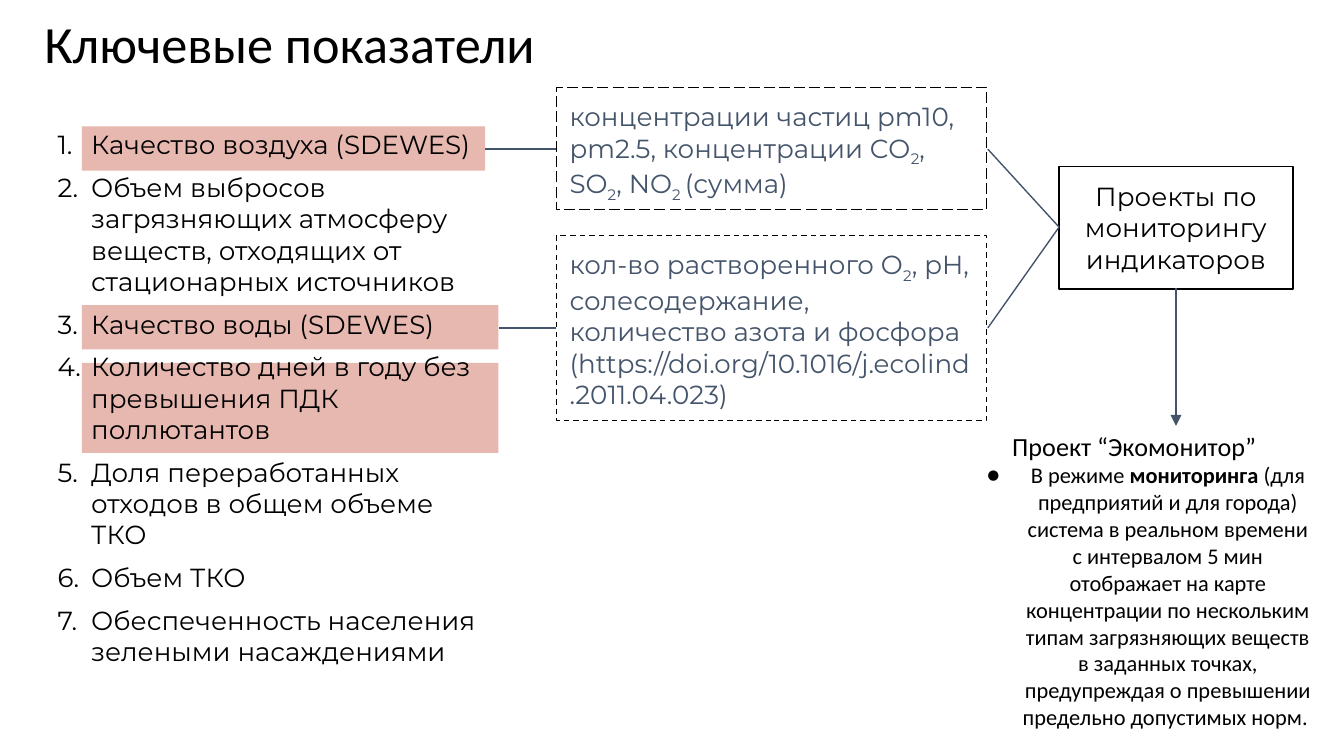
from dataclasses import dataclass

from lxml import etree
from pptx import Presentation
from pptx import util as u
from pptx.dml.color import RGBColor as Rgb
from pptx.enum import dml, shapes, text
from pptx.oxml import ns

PX = 9144  # EMU per px, 100 px to the inch


@dataclass(frozen=True)
class Theme:
    ink: Rgb = Rgb(0, 0, 0)
    slate: Rgb = Rgb(0x44, 0x54, 0x6A)
    rose: Rgb = Rgb(0xE6, 0xB8, 0xAF)
    sans: str = "Calibri"
    geo: str = "Montserrat"
    head: int = 28
    body: int = 14
    small: int = 12
    rule: float = 0.75


T = Theme()


def write(para, parts, size, face, color, mark=None):
    """Add runs; every second one is marked as "sub" or "bold"."""
    for i, part in enumerate(parts):
        run = para.add_run()
        run.text = part
        font = run.font
        font.size, font.name = u.Pt(size), face
        font.color.rgb = color
        if i % 2 and mark == "bold":
            font.bold = True
        elif i % 2 and mark == "sub":
            run._r.get_or_add_rPr().set("baseline", "-25000")


def bullet(para, left, hang, size, face, tag, **attrs):
    """Give a paragraph a black bullet with a hanging indent in px."""
    prop = para._p.get_or_add_pPr()
    prop.set("marL", str(left * PX))
    prop.set("indent", str(-hang * PX))
    tint = etree.SubElement(prop, ns.qn("a:buClr"))
    etree.SubElement(tint, ns.qn("a:srgbClr"), val=str(T.ink))
    etree.SubElement(prop, ns.qn("a:buSzPts"), val=str(size * 100))
    etree.SubElement(prop, ns.qn("a:buFont"), typeface=face)
    etree.SubElement(prop, ns.qn(tag), **attrs)


deck = Presentation()
deck.slide_width = 1000 * PX
deck.slide_height = deck.slide_width * 9 // 16
slide = deck.slides.add_slide(deck.slide_layouts[5])
items = slide.shapes

# Title
title = items.title
title.left, title.top, title.width, title.height = (n * PX for n in (26, 7, 905, 56))
frame = title.text_frame
frame.margin_left = frame.margin_right = 7 * PX
frame.margin_top = frame.margin_bottom = 4 * PX
frame.vertical_anchor = text.MSO_ANCHOR.MIDDLE
para = frame.paragraphs[0]
para.alignment = text.PP_ALIGN.LEFT
para.line_spacing = 0.9
write(para, ["Ключевые показатели"], T.head, T.sans, T.ink)

# Bands behind the measured indicators
for top, wide, high in ((94, 300, 33), (227, 310, 33), (270, 310, 67)):
    band = items.add_shape(shapes.MSO_SHAPE.RECTANGLE,
                           61 * PX, top * PX, wide * PX, high * PX)
    band.shadow.inherit = False
    band.fill.solid()
    band.fill.fore_color.rgb = T.rose
    band.line.fill.background()

# Numbered indicators
goals = [
    "Качество воздуха (SDEWES)",
    "Объем выбросов загрязняющих атмосферу веществ, отходящих от стационарных источников",
    "Качество воды (SDEWES)",
    "Количество дней в году без превышения ПДК поллютантов",
    "Доля переработанных отходов в общем объеме ТКО",
    "Объем ТКО",
    "Обеспеченность населения зелеными насаждениями",
]
frame = items.add_textbox(33 * PX, 91 * PX, 338 * PX, 447 * PX).text_frame
frame.word_wrap = True
frame.margin_left = frame.margin_right = 10 * PX
frame.margin_top = frame.margin_bottom = 5 * PX
for i, goal in enumerate(goals):
    para = frame.add_paragraph() if i else frame.paragraphs[0]
    para.space_before = u.Pt(6)
    bullet(para, 25, 28, T.body, T.geo, "a:buAutoNum", type="arabicPeriod")
    write(para, [goal], T.body, T.geo, T.ink)

# Outlined boxes: place, dash, colour, alignment, space before, runs
left, mid = text.PP_ALIGN.LEFT, text.PP_ALIGN.CENTER
dash = dml.MSO_LINE
boxes = [
    ((414, 65, 320, 91), dash.LONG_DASH, T.slate, left, 6,
     ["концентрации частиц pm10, pm2.5, концентрации CO", "2", ", SO", "2",
      ", NO", "2 ", "(сумма)"]),
    ((414, 175, 320, 138), dash.DASH, T.slate, left, 6,
     ["кол-во растворенного O", "2",
      ", pH, солесодержание, количество азота и фосфора "
      "(https://doi.org/10.1016/j.ecolind.2011.04.023)"]),
    ((788, 124, 174, 91), dash.SOLID, T.ink, mid, 0,
     ["Проекты по мониторингу индикаторов"]),
]
for place, style, color, align, gap, parts in boxes:
    box = items.add_shape(shapes.MSO_SHAPE.RECTANGLE, *(n * PX for n in place))
    box.shadow.inherit = False
    box.fill.background()
    box.line.color.rgb = T.ink
    box.line.width = u.Pt(T.rule)
    box.line.dash_style = style
    frame = box.text_frame
    frame.word_wrap = True
    frame.vertical_anchor = text.MSO_ANCHOR.TOP
    frame.margin_left = frame.margin_right = 10 * PX
    frame.margin_top = frame.margin_bottom = 10 * PX
    para = frame.paragraphs[0]
    para.alignment = align
    para.space_before = u.Pt(gap)
    write(para, parts, T.body, T.geo, color, "sub")

# Links, the last one with an arrowhead
links = [
    (361, 111, 414, 111),
    (414, 244, 371, 244),
    (735, 111, 788, 169),
    (735, 244, 788, 169),
    (875, 214, 875, 317),
]
for ends in links:
    link = items.add_connector(shapes.MSO_CONNECTOR.STRAIGHT, *(n * PX for n in ends))
    link.line.color.rgb = T.slate
    link.line.width = u.Pt(T.rule)
    etree.SubElement(link._element.spPr, ns.qn("a:effectLst"))
etree.SubElement(link.line._get_or_add_ln(), ns.qn("a:tailEnd"), type="triangle")

# Project note
frame = items.add_textbox(700 * PX, 310 * PX, 288 * PX, 246 * PX).text_frame
frame.word_wrap = True
frame.margin_left = frame.margin_right = 10 * PX
frame.margin_top = frame.margin_bottom = 10 * PX
para = frame.paragraphs[0]
para.alignment = mid
write(para, ["Проект “Экомонитор”"], T.body, T.sans, T.ink)
para = frame.add_paragraph()
para.alignment = mid
bullet(para, 50, 33, T.small, T.sans, "a:buChar", char="●")
write(para, [
    "В режиме ", "мониторинга ",
    "(для предприятий и для города) система в реальном времени с интервалом "
    "5 мин отображает на карте концентрации по нескольким типам загрязняющих "
    "веществ в заданных точках, предупреждая о превышении предельно "
    "допустимых норм. ",
], T.small, T.sans, T.ink, "bold")

deck.save("out.pptx")
